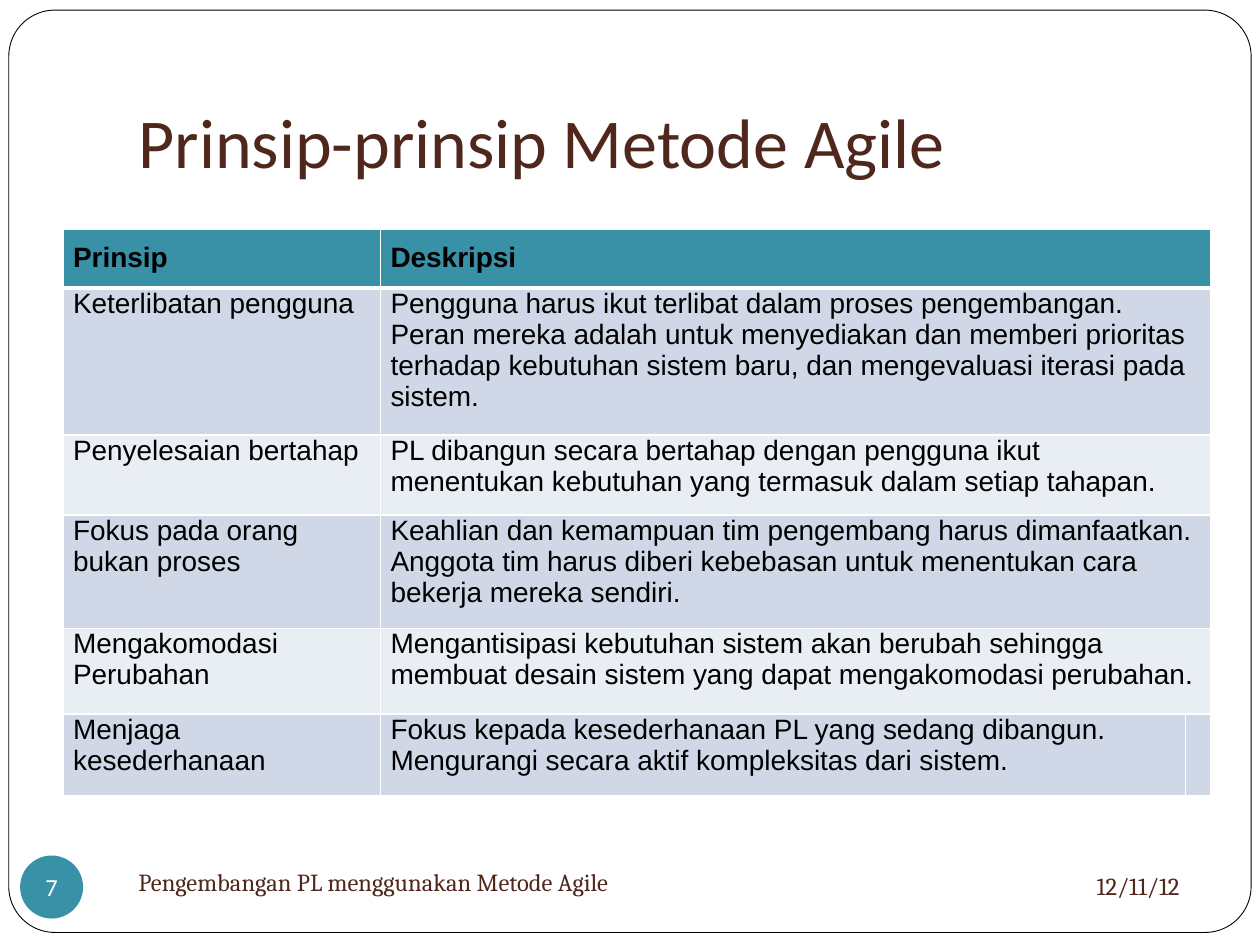
import pptx
import pptx.dml.color
import pptx.enum.shapes
import pptx.enum.text
import pptx.oxml.ns
import pptx.util
from lxml import etree

SHAPE = pptx.enum.shapes.MSO_SHAPE
ALIGN = pptx.enum.text.PP_ALIGN
ANCHOR = pptx.enum.text.MSO_ANCHOR

COLORS = {
    "paper": "FFFFFF",
    "ink": "000000",
    "brown": "4F271C",
    "teal": "3891A7",
    "band_dark": "D0D8E8",
    "band_light": "E9EDF4",
}
COLUMN_SHARES = (25.2, 63.9, 1.4)
ROW_SHARES = (4.67, 11.73, 7.2, 9.07, 9.07, 8.67)
PRINCIPLES = (
    ("Prinsip", "Deskripsi"),
    ("Keterlibatan pengguna",
     "Pengguna harus ikut terlibat dalam proses pengembangan. Peran mereka adalah "
     "untuk menyediakan dan memberi prioritas terhadap kebutuhan sistem baru, dan "
     "mengevaluasi iterasi pada sistem."),
    ("Penyelesaian bertahap",
     "PL dibangun secara bertahap dengan pengguna ikut menentukan kebutuhan yang "
     "termasuk dalam setiap tahapan."),
    ("Fokus pada orang bukan proses",
     "Keahlian dan kemampuan tim pengembang harus dimanfaatkan. Anggota tim harus "
     "diberi kebebasan untuk menentukan cara bekerja mereka sendiri."),
    ("Mengakomodasi Perubahan",
     "Mengantisipasi kebutuhan sistem akan berubah sehingga membuat desain sistem "
     "yang dapat mengakomodasi perubahan."),
    ("Menjaga kesederhanaan",
     "Fokus kepada kesederhanaan PL yang sedang dibangun. Mengurangi secara aktif "
     "kompleksitas dari sistem."),
)


def rgb(name):
    return pptx.dml.color.RGBColor.from_string(COLORS[name])


class SlideBuilder:
    """Places styled elements; lengths are percentages of the slide's size."""

    def __init__(self, deck):
        self.deck = deck
        self.slide = deck.slides.add_slide(deck.slide_layouts[5])
        self.shapes = self.slide.shapes

    def across(self, share):
        return round(self.deck.slide_width * share / 100)

    def down(self, share):
        return round(self.deck.slide_height * share / 100)

    def box(self, left, top, width, height):
        return self.across(left), self.down(top), self.across(width), self.down(height)

    def set_text(self, frame, text, font, size, color, align=ALIGN.LEFT, bold=False):
        frame.text = text
        frame.word_wrap = True
        paragraph = frame.paragraphs[0]
        paragraph.alignment = align
        for run in paragraph.runs:
            run.font.name = font
            run.font.size = pptx.util.Pt(size)
            run.font.bold = bold
            run.font.color.rgb = rgb(color)

    def shape(self, kind, place, fill):
        shape = self.shapes.add_shape(kind, *self.box(*place))
        shape.shadow.inherit = False
        shape.fill.solid()
        shape.fill.fore_color.rgb = rgb(fill)
        return shape

    def border(self, *place):
        border = self.shape(SHAPE.ROUNDED_RECTANGLE, place, "paper")
        border.adjustments[0] = 0.05
        border.line.color.rgb = rgb("ink")
        border.line.width = pptx.util.Pt(0.5)

    def title(self, text, *place):
        title = self.shapes.title
        title.left, title.top, title.width, title.height = self.box(*place)
        # Bring the title in front of the border.
        title.element.getparent().append(title.element)
        frame = title.text_frame
        self.set_text(frame, text, "Calibri", 40, "brown")
        frame.auto_size = pptx.enum.text.MSO_AUTO_SIZE.NONE
        frame.vertical_anchor = ANCHOR.BOTTOM
        frame.margin_bottom = pptx.util.Inches(0.1)

    def footer(self, text, *place, align=ALIGN.LEFT):
        frame = self.shapes.add_textbox(*self.box(*place)).text_frame
        self.set_text(frame, text, "Cambria", 14, "brown", align)
        frame.vertical_anchor = ANCHOR.MIDDLE

    def page_badge(self, number, *place):
        badge = self.shape(SHAPE.OVAL, place, "teal")
        badge.line.fill.background()
        frame = badge.text_frame
        self.set_text(frame, number, "Calibri", 14, "paper", ALIGN.CENTER)
        frame.word_wrap = False
        frame.vertical_anchor = ANCHOR.MIDDLE
        frame.margin_left = frame.margin_right = 0
        frame.margin_top = frame.margin_bottom = 0

    def cell_borders(self, cell, row):
        properties = cell._tc.get_or_add_tcPr()
        widths = {"lnL": 1, "lnR": 1, "lnT": 3 if row == 1 else 1, "lnB": 3 if row == 0 else 1}
        for side, points in widths.items():
            line = etree.SubElement(properties, pptx.oxml.ns.qn("a:" + side),
                                    w=str(pptx.util.Pt(points)))
            fill = etree.SubElement(line, pptx.oxml.ns.qn("a:solidFill"))
            etree.SubElement(fill, pptx.oxml.ns.qn("a:srgbClr"), val=COLORS["paper"])

    def style_cell(self, cell, row):
        self.cell_borders(cell, row)
        cell.fill.solid()
        band = "band_dark" if row % 2 else "band_light"
        cell.fill.fore_color.rgb = rgb("teal" if row == 0 else band)
        cell.margin_left = cell.margin_right = pptx.util.Inches(0.08)
        cell.margin_top = pptx.util.Inches(0.1 if row == 0 else 0)
        cell.margin_bottom = pptx.util.Inches(0.1)

    def table(self, records, columns, rows, left, top):
        place = self.box(left, top, sum(columns), sum(rows))
        table = self.shapes.add_table(len(rows), len(columns), *place).table
        table.first_row = table.horz_banding = False
        for column, share in zip(table.columns, columns):
            column.width = self.across(share)
        for row, (share, record) in enumerate(zip(rows, records)):
            table.rows[row].height = self.down(share)
            for cell in table.rows[row].cells:
                self.style_cell(cell, row)
            # The narrow last column stands alone only in the last row.
            if row < len(rows) - 1:
                table.cell(row, 1).merge(table.cell(row, 2))
            for column, text in enumerate(record):
                align = ALIGN.JUSTIFY if row + column < 2 else ALIGN.LEFT
                self.set_text(table.cell(row, column).text_frame, text, "Arial", 16,
                              "ink", align, bold=row == 0)


def main():
    deck = pptx.Presentation()
    deck.slide_width = pptx.util.Inches(10)
    deck.slide_height = pptx.util.Inches(7.5)

    page = SlideBuilder(deck)
    page.border(0.7, 1.07, 98.6, 97.6)
    page.title("Prinsip-prinsip Metode Agile", 10, 4, 85, 16.67)
    page.footer("12/11/12", 67.5, 90.27, 27.1, 6.93, align=ALIGN.RIGHT)
    page.footer("Pengembangan PL menggunakan Metode Agile", 10, 90, 43.3, 6.67)
    page.page_badge("7", 1.6, 90.53, 5, 6.67)
    page.table(PRINCIPLES, COLUMN_SHARES, ROW_SHARES, 5, 24.27)

    deck.save("out.pptx")


if __name__ == "__main__":
    main()
